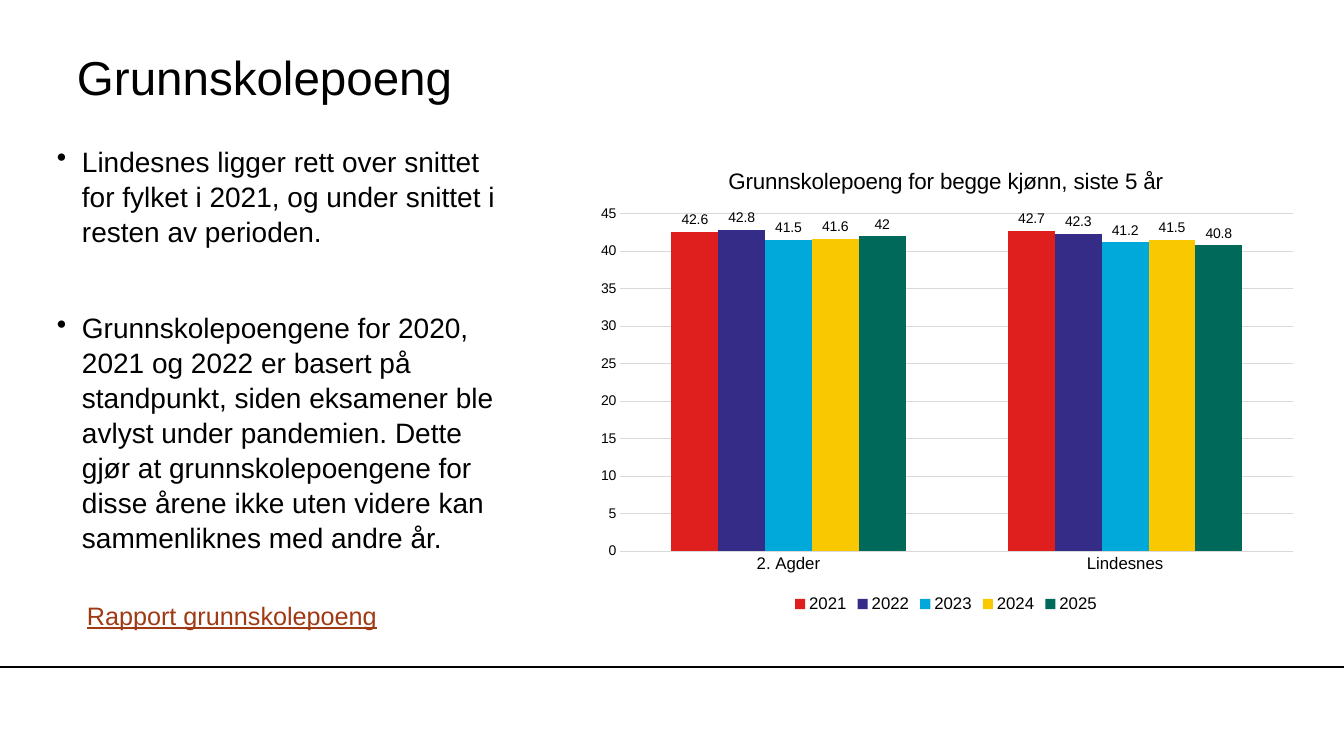
import pptx
import pptx.chart.data
import pptx.dml.color
import pptx.enum.chart
import pptx.enum.shapes
import pptx.enum.text
import pptx.util
from lxml import etree

Pt = pptx.util.Pt
PX = 914400 / 100.8


def px(*lengths):
    """Turn pixel lengths into EMU."""
    return [round(n * PX) for n in lengths]


def set_font(font, size, color="000000", **extra):
    font.color.rgb = pptx.dml.color.RGBColor.from_string(color)
    for key, value in {"name": "Arial", "size": Pt(size), **extra}.items():
        setattr(font, key, value)


prs = pptx.Presentation()
prs.slide_width, prs.slide_height = px(1344, 756)
s = prs.slides.add_slide(prs.slide_layouts[6])

# Footer rule
rule = s.shapes.add_connector(pptx.enum.shapes.MSO_CONNECTOR.STRAIGHT, *px(0, 667, 1344, 667))
rule.line.width = Pt(0.75)
rule.line.color.rgb = pptx.dml.color.RGBColor.from_string("000000")
etree.SubElement(rule._element.spPr, pptx.oxml.ns.qn("a:effectLst"))

# Title, bullets and report line
no_inset = dict.fromkeys(["margin_left", "margin_top", "margin_right", "margin_bottom"], 0)
middle = {"vertical_anchor": pptx.enum.text.MSO_ANCHOR.MIDDLE}
bullets = [
    "Lindesnes ligger rett over snittet for fylket i 2021, og under snittet i resten av perioden.",
    "Grunnskolepoengene for 2020, 2021 og 2022 er basert på standpunkt, siden eksamener ble "
    "avlyst under pandemien. Dette gjør at grunnskolepoengene for disse årene ikke uten videre "
    "kan sammenliknes med andre år.",
]
texts = [
    ((77, 38, 1119, 76), {**no_inset, **middle}, ["Grunnskolepoeng"], False, {"size": 34}),
    ((57, 143, 454, 452), no_inset, bullets, True, {"size": 20}),
    ((77, 595, 333, 40), {}, ["Rapport grunnskolepoeng"], False,
     {"size": 18, "color": "9F3A14", "underline": True}),
]
for box, frame, paragraphs, bulleted, font in texts:
    tf = s.shapes.add_textbox(*px(*box)).text_frame
    for key, value in {"word_wrap": True, **frame}.items():
        setattr(tf, key, value)
    for i, text in enumerate(paragraphs):
        p = tf.paragraphs[0] if i == 0 else tf.add_paragraph()
        if bulleted:
            pPr = p._p.get_or_add_pPr()
            indent = px(25)[0]
            pPr.set("marL", str(indent))
            pPr.set("indent", str(-indent))
            etree.SubElement(pPr, pptx.oxml.ns.qn("a:buChar"), char="•")
            p.line_spacing = 1.04
            if i:
                p.space_before = Pt(44)
        r = p.add_run()
        r.text = text
        set_font(r.font, **font)

# Chart
points = {
    "2021": ("DF1F1D", (42.6, 42.7)),
    "2022": ("342C86", (42.8, 42.3)),
    "2023": ("00A9DA", (41.5, 41.2)),
    "2024": ("FAC800", (41.6, 41.5)),
    "2025": ("00695A", (42, 40.8)),
}
data = pptx.chart.data.CategoryChartData()
data.categories = ["2. Agder", "Lindesnes"]
for year, (color, values) in points.items():
    data.add_series(year, values)
chart = s.shapes.add_chart(
    pptx.enum.chart.XL_CHART_TYPE.COLUMN_CLUSTERED, *px(584, 148, 724, 469), data
).chart
set_font(chart.font, 10)

chart.has_title = True
p = chart.chart_title.text_frame.paragraphs[0]
r = p.add_run()
r.text = "Grunnskolepoeng for begge kjønn, siste 5 år"
set_font(r.font, 16, bold=False)

chart.has_legend = True
chart.legend.position = pptx.enum.chart.XL_LEGEND_POSITION.BOTTOM
chart.legend.include_in_layout = False
set_font(chart.legend.font, 12)

plot = chart.plots[0]
plot.gap_width, plot.overlap, plot.vary_by_categories = 219, 0, False
for series, (color, values) in zip(plot.series, points.values()):
    series.format.fill.solid()
    series.format.fill.fore_color.rgb = pptx.dml.color.RGBColor.from_string(color)
    labels = series.data_labels
    labels.show_value = True
    labels.position = pptx.enum.chart.XL_LABEL_POSITION.OUTSIDE_END
    set_font(labels.font, 10)

for axis, size in ((chart.category_axis, 12), (chart.value_axis, 10)):
    axis.major_tick_mark = pptx.enum.chart.XL_TICK_MARK.NONE
    set_font(axis.tick_labels.font, size)
value_axis = chart.value_axis
value_axis.minimum_scale, value_axis.maximum_scale, value_axis.major_unit = 0, 45, 5
value_axis.format.line.fill.background()
for line in (chart.category_axis.format.line, value_axis.major_gridlines.format.line):
    line.width = Pt(0.75)
    line.color.rgb = pptx.dml.color.RGBColor.from_string("D9D9D9")

# Inner plot area as fractions of the chart frame
plot_area = chart._chartSpace.chart.plotArea
for old in plot_area.findall(pptx.oxml.ns.qn("c:layout")):
    plot_area.remove(old)
layout = etree.Element(pptx.oxml.ns.qn("c:layout"))
manual = etree.SubElement(layout, pptx.oxml.ns.qn("c:manualLayout"))
for tag, value in {"layoutTarget": "inner", "xMode": "edge", "yMode": "edge",
                   "x": 0.05, "y": 0.14, "w": 0.93, "h": 0.72}.items():
    etree.SubElement(manual, pptx.oxml.ns.qn("c:" + tag), val=str(value))
plot_area.insert(0, layout)

prs.save("out.pptx")
